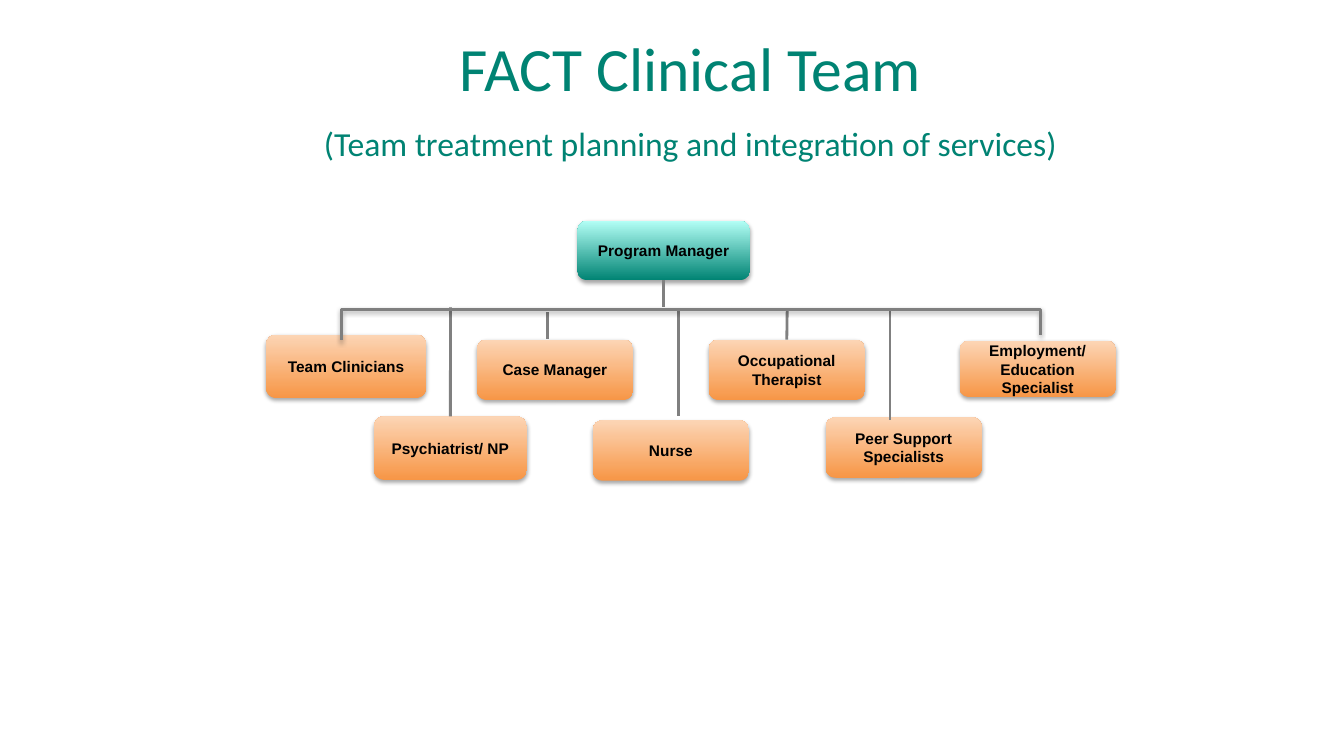
from lxml import etree
from pptx import Presentation
from pptx.dml.color import RGBColor
from pptx.enum.shapes import MSO_CONNECTOR as CONN, MSO_SHAPE as SHAPE
from pptx.enum.text import MSO_ANCHOR as ANCHOR, MSO_AUTO_SIZE as AUTO, PP_ALIGN as ALIGN
from pptx.oxml import parse_xml
from pptx.oxml.ns import nsdecls, qn
from pptx.util import Pt

TEAL, ORANGE, GREY = ("008373", "B3FFF6"), ("F79646", "FCD5B5"), "808080"

# Role, box (left, top, width, height), drop line (x, top, bottom), joined to box
ROLES = [
    ("Team Clinicians", (0, 81.3, 114.5, 45.4), None, False),
    ("Psychiatrist/ NP", (77, 139.7, 109.4, 45.4), (131.8, 61.9, 139.7), True),
    ("Case Manager", (150.6, 84.9, 111.6, 43.2), (201, 65.5, 84.2), False),
    ("Nurse", (233.4, 142.5, 111.6, 43.2), (294.6, 62.6, 139.7), False),
    ("Occupational Therapist", (316.2, 84.9, 111.6, 43.2), (372.3, 64.1, 84.9), True),
    ("Peer Support Specialists", (399.7, 140.4, 111.6, 43.2), (445.8, 63.3, 142.5), False),
    ("Employment/ Education Specialist", (495.4, 85.7, 111.6, 40.3), None, False),
]


def color(code):
    return RGBColor.from_string(code)


def set_font(r, name, size, code, bold=False):
    r.font.name, r.font.size, r.font.bold = name, Pt(size), bold
    r.font.color.rgb = color(code)


def add_shadow(sp, dist, alpha):
    """Soft black shadow straight below the shape."""
    sp.shadow.inherit = False
    effects = sp._element.spPr.find(qn("a:effectLst"))
    effects.append(parse_xml(
        f'<a:outerShdw {nsdecls("a")} blurRad="{Pt(3.1)}" dist="{Pt(dist)}" '
        f'dir="5400000" rotWithShape="0"><a:srgbClr val="000000">'
        f'<a:alpha val="{alpha * 1000}"/></a:srgbClr></a:outerShdw>'))


def add_role(s, text, left, top, width, height, colors):
    sp = s.shapes.add_shape(SHAPE.ROUNDED_RECTANGLE, Pt(left), Pt(top), Pt(width), Pt(height))
    sp.fill.gradient()
    sp.fill.gradient_angle = 90
    for stop, code, position in zip(sp.fill.gradient_stops, colors, (0, 1)):
        stop.color.rgb, stop.position = color(code), position
    sp.line.fill.background()
    add_shadow(sp, 1.8, 35)
    tf = sp.text_frame
    tf.text, tf.word_wrap, tf.vertical_anchor = text, True, ANCHOR.MIDDLE
    p = tf.paragraphs[0]
    p.alignment = ALIGN.CENTER
    set_font(p.runs[0], "Arial", 11, "000000", True)
    return sp


def add_line(s, x, top, bottom):
    line = s.shapes.add_connector(CONN.STRAIGHT, Pt(x), Pt(top), Pt(x), Pt(bottom))
    line.line.color.rgb, line.line.width = color(GREY), Pt(2)
    etree.SubElement(line._element.spPr, qn("a:effectLst"))
    return line


def add_title(s, left, top, width, height):
    title = s.shapes.title
    title.left, title.top, title.width, title.height = map(Pt, (left, top, width, height))
    tf = title.text_frame
    tf.auto_size, tf.word_wrap, tf.vertical_anchor = AUTO.NONE, True, ANCHOR.MIDDLE
    tf.margin_left = tf.margin_right = 0
    p = tf.paragraphs[0]
    p.text = "FACT Clinical Team\v(Team treatment planning and integration of services)"
    p.alignment, p.line_spacing = ALIGN.CENTER, Pt(42)
    for r, size in zip(p.runs, (44, 24)):
        set_font(r, "Calibri", size, TEAL[0])


def add_org_chart(s, left, top):
    # Manager and stem
    manager = add_role(s, "Program Manager", left + 222.5, top, 123, 42.5, TEAL)
    stem = add_line(s, left + 284, top + 42.5, top + 61.9)
    stem.begin_connect(manager, 2)

    # Team roles and their drop lines
    for text, (x, y, w, h), drop, joined in ROLES:
        sp = add_role(s, text, left + x, top + y, w, h, ORANGE)
        if drop:
            line_x, start, end = drop
            line = add_line(s, left + line_x, top + start, top + end)
            if joined:
                line.end_connect(sp, 0)

    # Bracket spanning the outer roles
    points = [(Pt(left + x), Pt(top + y))
              for x, y in ((54.1, 84.9), (54.1, 63.3), (553, 63.3), (553, 81.3))]
    builder = s.shapes.build_freeform(*points[0])
    builder.add_line_segments(points[1:], close=False)
    bracket = builder.convert_to_shape()
    bracket.fill.background()
    bracket.line.color.rgb, bracket.line.width = color("7F7F7F"), Pt(2)
    add_shadow(bracket, 1.6, 38)


def main():
    prs = Presentation()
    prs.slide_width, prs.slide_height = Pt(960), Pt(540)
    s = prs.slides.add_slide(prs.slide_layouts[5])
    add_title(s, 61.2, 29.5, 864, 90)
    add_org_chart(s, 190, 157.7)
    prs.save("out.pptx")


if __name__ == "__main__":
    main()
